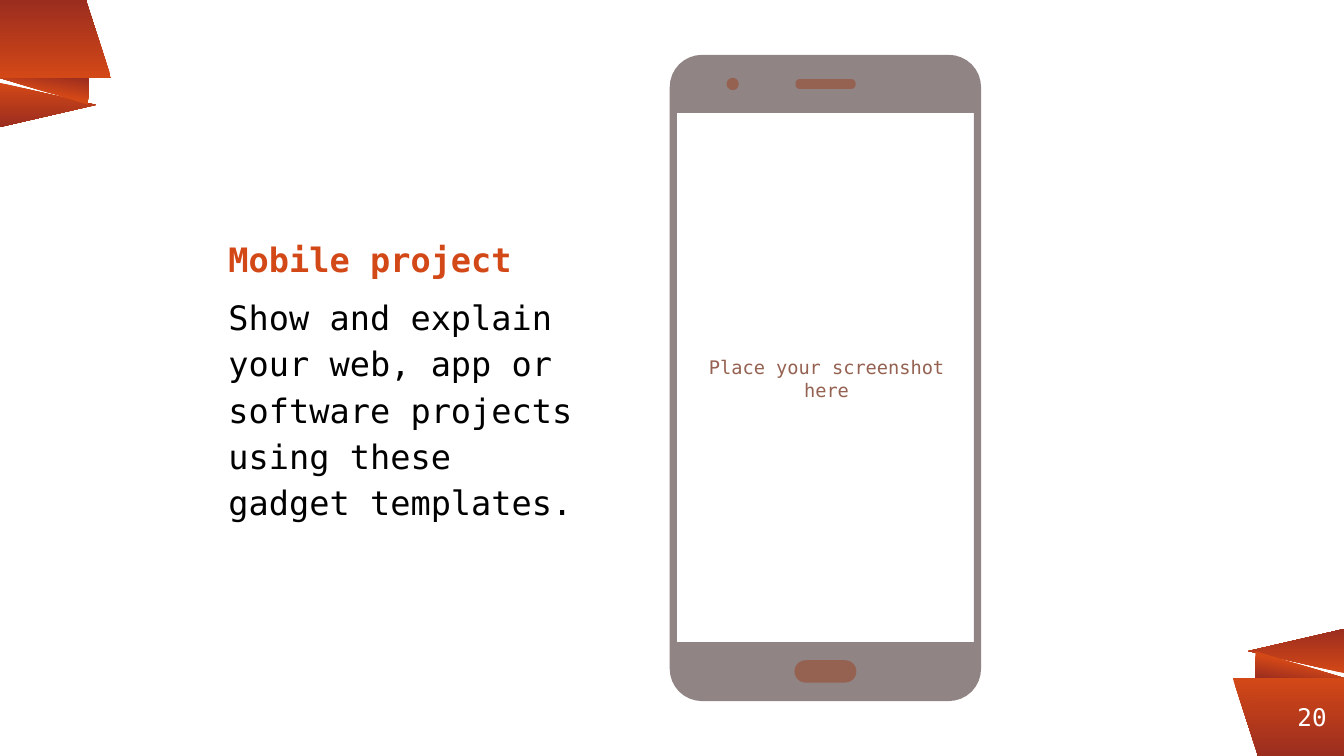
"""Build the mobile project slide with a phone mock-up."""
from math import cos, radians, sin

from pptx import Presentation
from pptx.dml.color import RGBColor
from pptx.enum.shapes import MSO_SHAPE as SHAPE
from pptx.enum.text import MSO_ANCHOR as ANCHOR, PP_ALIGN as ALIGN
from pptx.util import Pt

WIDTH, HEIGHT = 720, 405
COLORS = {
    "orange": "D34817",
    "red": "9B2D1F",
    "gray": "918485",
    "brown": "956251",
    "black": "000000",
    "white": "FFFFFF",
}


def rgb(name):
    return RGBColor.from_string(COLORS[name])


class Deck:
    def __init__(self, font):
        self.font = font
        self.prs = Presentation()
        self.prs.slide_width, self.prs.slide_height = Pt(WIDTH), Pt(HEIGHT)
        self.s = self.prs.slides.add_slide(self.prs.slide_layouts[6])

    def shape(self, kind, box, color=None, adjust=None):
        sp = self.s.shapes.add_shape(kind, *map(Pt, box))
        if adjust is not None:
            sp.adjustments[0] = adjust
        return self.finish(sp, color)

    def finish(self, sp, color=None):
        sp.shadow.inherit = False
        sp.line.fill.background()
        if color:
            sp.fill.solid()
            sp.fill.fore_color.rgb = rgb(color)
        return sp

    def ribbon(self, kind, box, rotation, angle, start=0, adjust=None):
        sp = self.shape(kind, box, adjust=adjust)
        sp.rotation = rotation % 360
        sp.fill.gradient()
        sp.fill.gradient_angle = angle
        first, last = sp.fill.gradient_stops
        first.color.rgb, first.position = rgb("orange"), start
        last.color.rgb, last.position = rgb("red"), 1

    def corner(self, opposite=False):
        pieces = [
            (SHAPE.ISOSCELES_TRIANGLE, (13.9, 30.5, 23.6, 51.4), 90, 0, 0, 0.5),
            (SHAPE.RIGHT_TRIANGLE, (0, 41.8, 47.5, 14.4), 180, 260, 0.47, None),
            (SHAPE.RECTANGLE, (0, 0, 46.4, 41.8), 0, 90, 0, None),
            (SHAPE.ISOSCELES_TRIANGLE, (46, 0, 13.6, 41.8), 0, 90, 0, 0),
        ]
        for kind, (x, y, w, h), rotation, *style in pieces:
            if opposite:
                x, y, rotation = WIDTH - x - w, HEIGHT - y - h, rotation + 180
            self.ribbon(kind, (x, y, w, h), rotation, *style)

    def text(self, box, paragraphs, align=ALIGN.LEFT, inset=0, spacing=None, gap=0):
        tf = self.s.shapes.add_textbox(*map(Pt, box)).text_frame
        tf.word_wrap = True
        tf.vertical_anchor = ANCHOR.MIDDLE
        tf.margin_left = tf.margin_right = Pt(inset)
        tf.margin_top = tf.margin_bottom = Pt(inset)
        for i, (words, size, color, bold) in enumerate(paragraphs):
            p = tf.add_paragraph() if i else tf.paragraphs[0]
            p.alignment = align
            p.space_before = Pt(gap if i else 0)
            if spacing:
                p.line_spacing = spacing
            r = p.add_run()
            r.text = words
            r.font.name, r.font.size, r.font.bold = self.font, Pt(size), bold
            r.font.color.rgb = rgb(color)

    def frame(self, box, radius, screen, color):
        x, y, w, h = box
        centers = [
            (x + w - radius, y + h - radius),
            (x + radius, y + h - radius),
            (x + radius, y + radius),
            (x + w - radius, y + radius),
        ]
        outline = []
        for quarter, (cx, cy) in enumerate(centers):
            for step in range(9):
                a = radians(90 * quarter + 90 * step / 8)
                outline.append((Pt(cx + radius * cos(a)), Pt(cy + radius * sin(a))))
        left, top, width, height = map(Pt, screen)
        right, bottom = left + width, top + height
        builder = self.s.shapes.build_freeform(*outline[0])
        builder.add_line_segments(outline[1:])
        builder.move_to(left, top)
        builder.add_line_segments([(left, bottom), (right, bottom), (right, top)])
        self.finish(builder.convert_to_shape(), color)


def main():
    deck = Deck("DejaVu Sans Mono")
    deck.corner(opposite=True)
    deck.corner()
    deck.text(
        (122.4, 29.5, 190, 346),
        [
            ("Mobile project", 18, "orange", True),
            ("Show and explain your web, app or software projects "
             "using these gadget templates.", 18, "black", False),
        ],
        spacing=1.15,
        gap=6,
    )
    deck.text((363.6, 62, 158.4, 281.5),
              [("Place your screenshot here", 10, "brown", False)],
              ALIGN.CENTER, inset=7.2)
    deck.text((672.5, 363.2, 38.2, 41.8), [("20", 13, "white", False)], ALIGN.RIGHT)
    deck.frame((358.8, 29.4, 166.8, 346.2), 17.3, (362.7, 60.5, 159, 283.5), "gray")
    deck.shape(SHAPE.ROUNDED_RECTANGLE, (425.6, 353.7, 33.2, 12), "brown", 0.5)
    deck.shape(SHAPE.OVAL, (389.2, 41.7, 6.6, 6.6), "brown")
    deck.shape(SHAPE.ROUNDED_RECTANGLE, (426.2, 42.4, 32.2, 5.2), "brown", 0.4)
    deck.prs.save("out.pptx")


if __name__ == "__main__":
    main()
